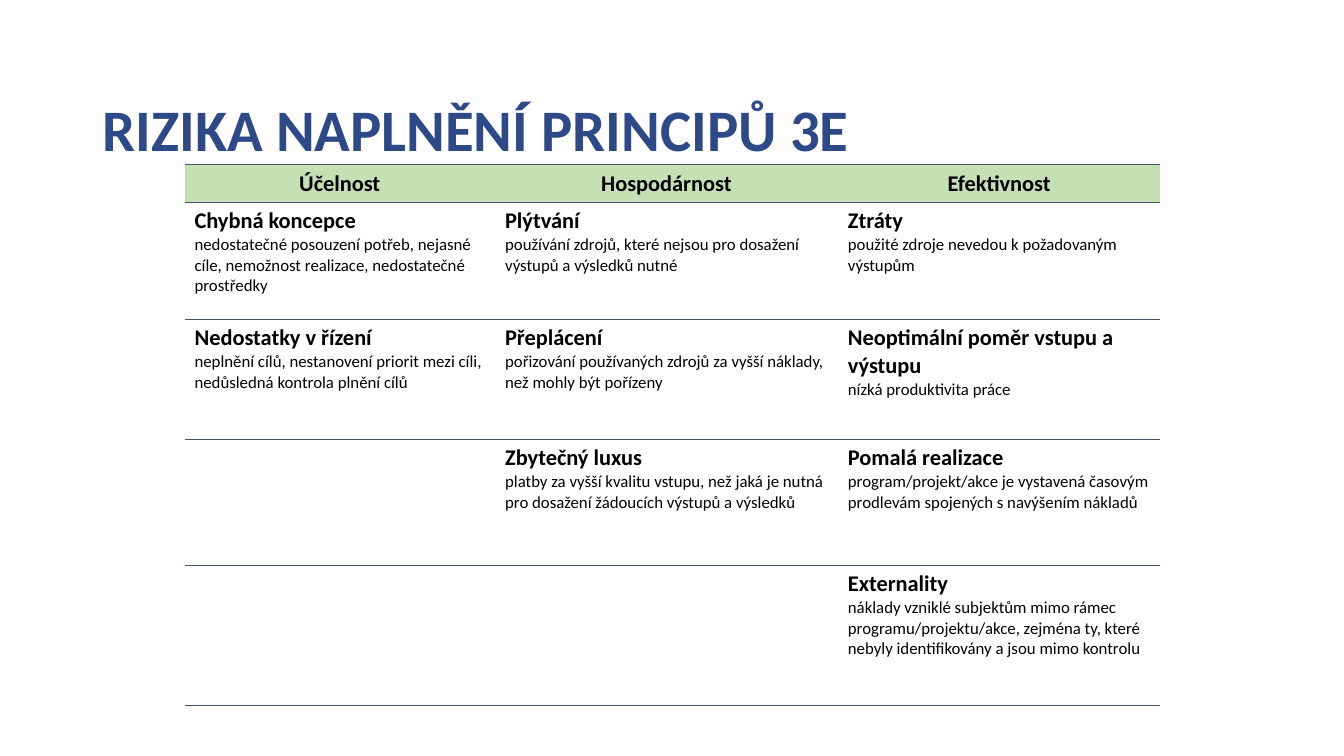
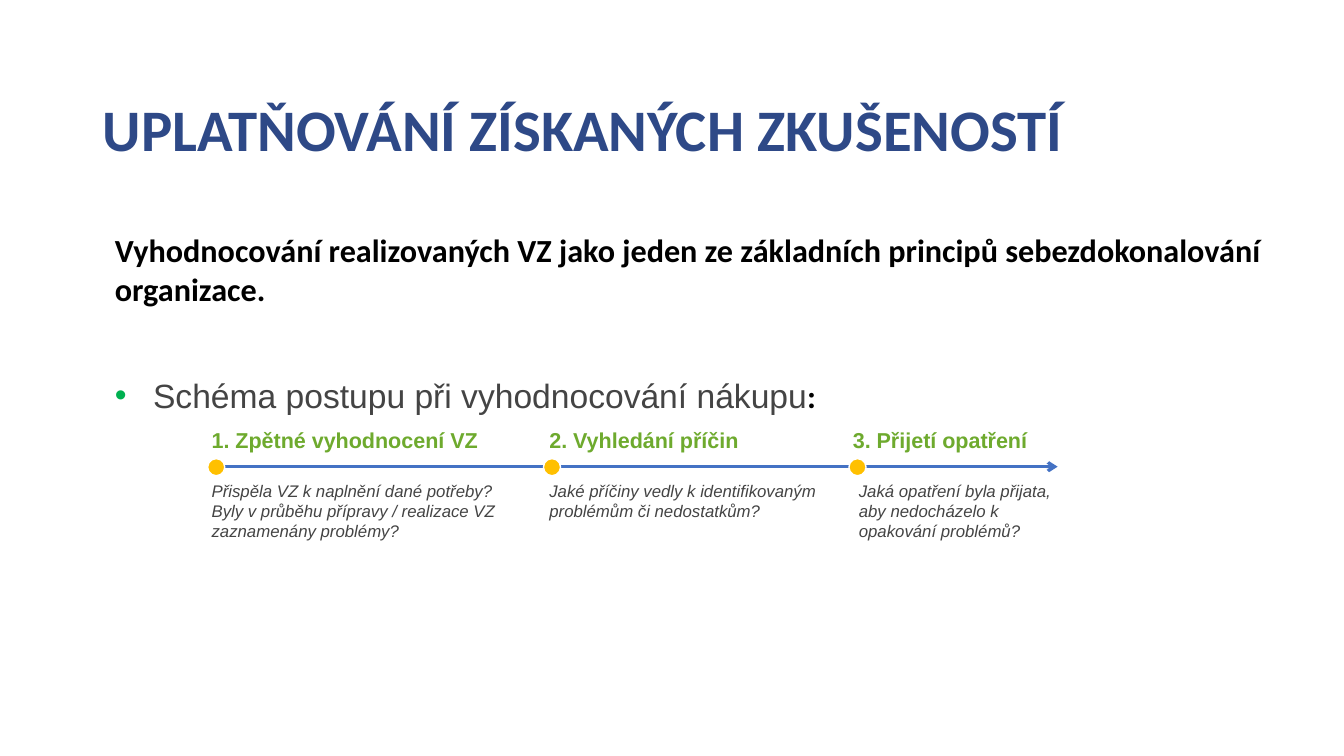
from lxml.etree import SubElement as Sub
from pptx import Presentation
from pptx.dml.color import RGBColor as RGB
from pptx.enum.shapes import MSO_CONNECTOR as LINE, MSO_SHAPE as SHAPE
from pptx.enum.text import MSO_ANCHOR as ANCHOR, PP_ALIGN as ALIGN
from pptx.oxml.ns import qn
from pptx.util import Inches, Pt

COLORS = {
    "title": "2E4987", "black": "000000", "gray": "444444",
    "head": "C5E0B4", "rule": "44546A", "step": "6EAA2E",
    "bullet": "00B050", "arrow": "4472C4", "dot": "FFC000", "white": "FFFFFF",
}
HEADS = ["Účelnost", "Hospodárnost", "Efektivnost"]
RISKS = [
    [("Chybná koncepce", "nedostatečné posouzení potřeb, nejasné cíle, nemožnost realizace, nedostatečné prostředky"),
     ("Plýtvání", "používání zdrojů, které nejsou pro dosažení výstupů a výsledků nutné"),
     ("Ztráty", "použité zdroje nevedou k požadovaným výstupům")],
    [("Nedostatky v řízení", "neplnění cílů, nestanovení priorit mezi cíli, nedůsledná kontrola plnění cílů"),
     ("Přeplácení", "pořizování používaných zdrojů za vyšší náklady, než mohly být pořízeny"),
     ("Neoptimální poměr vstupu a výstupu", "nízká produktivita práce")],
    [None,
     ("Zbytečný luxus", "platby za vyšší kvalitu vstupu, než jaká je nutná pro dosažení žádoucích výstupů a výsledků"),
     ("Pomalá realizace", "program/projekt/akce je vystavená časovým prodlevám spojených s navýšením nákladů")],
    [None, None,
     ("Externality", "náklady vzniklé subjektům mimo rámec programu/projektu/akce, zejména ty, které nebyly identifikovány a jsou mimo kontrolu")],
]
STEPS = [
    (2, 2.06, 2, 3.19, "1. Zpětné vyhodnocení VZ",
     ["Přispěla VZ k naplnění dané potřeby?",
      "Byly v průběhu přípravy / realizace VZ zaznamenány problémy?"]),
    (5.35, 5.39, 5.35, 3.01, "2. Vyhledání příčin",
     ["Jaké příčiny vedly k identifikovaným problémům či nedostatkům?"]),
    (8.36, 8.42, 8.42, 2.26, "3. Přijetí opatření",
     ["Jaká opatření byla přijata, aby nedocházelo k opakování problémů?"]),
]


class Deck:
    """Holds the shared style and the current slide."""

    def __init__(self):
        self.prs = Presentation()
        self.prs.slide_width, self.prs.slide_height = Inches(13.33), Inches(7.5)

    def color(self, name):
        return RGB.from_string(COLORS[name])

    def font(self, font, size, color, bold=False, italic=False, name="Calibri"):
        font.name, font.size = name, Pt(size)
        font.bold, font.italic = bold, italic
        font.color.rgb = self.color(color)

    def slide(self, title):
        self.page = self.prs.slides.add_slide(self.prs.slide_layouts[6])
        self.text((0.92, 0.87, 12.41, 0.81), [title], size=42, color="title", bold=True)

    def text(self, box, lines, **style):
        frame = self.page.shapes.add_textbox(*map(Inches, box)).text_frame
        frame.word_wrap = True
        for i, line in enumerate(lines):
            para = frame.paragraphs[0] if i == 0 else frame.add_paragraph()
            para.text = line
            self.font(para.font, **style)
        return frame

    def body(self, lead, item, end):
        frame = self.text((0.92, 2.24, 11.85, 2.47), [lead],
                          size=23, color="black", bold=True)
        first = frame.paragraphs[0]
        first.space_after = Pt(6)
        first._p.get_or_add_pPr().set("marL", str(Inches(0.12)))
        para = frame.add_paragraph()
        para.space_before = Pt(41.7)
        props = para._p.get_or_add_pPr()
        props.set("marL", str(Inches(0.5)))
        props.set("indent", str(Inches(-0.38)))
        tint = Sub(props, qn("a:buClr"))
        Sub(tint, qn("a:srgbClr"), val=COLORS["bullet"])
        Sub(props, qn("a:buFont"), typeface="Arial")
        Sub(props, qn("a:buChar"), char="•")
        for words, style in ((item, dict(size=24, color="gray", name="Arial")),
                             (end, dict(size=23, color="black", bold=True))):
            run = para.add_run()
            run.text = words
            self.font(run.font, **style)

    def edges(self, cell):
        props = cell._tc.get_or_add_tcPr()
        for side in "LR":
            Sub(Sub(props, qn("a:ln" + side), w="0"), qn("a:noFill"))
        for side in "TB":
            line = Sub(props, qn("a:ln" + side), w=str(Pt(1)))
            Sub(Sub(line, qn("a:solidFill")), qn("a:srgbClr"), val=COLORS["rule"])

    def cell(self, cell, entry, head):
        self.edges(cell)
        para = cell.text_frame.paragraphs[0]
        if head:
            cell.fill.solid()
            cell.fill.fore_color.rgb = self.color("head")
            cell.vertical_anchor = ANCHOR.MIDDLE
            para.alignment = ALIGN.CENTER
            para.text = entry
        else:
            cell.fill.background()
            if entry:
                name, note = entry
                para.add_run().text = name
                para.add_line_break()
                run = para.add_run()
                run.text = note
                run.font.size, run.font.bold = Pt(12), False
        self.font(para.font, 16, "black", bold=True)

    def table(self, left, top, cols, rows, data):
        table = self.page.shapes.add_table(
            len(rows), len(cols), Inches(left), Inches(top),
            Inches(sum(cols)), Inches(sum(rows))).table
        table.first_row = table.horz_banding = False
        for col, width in zip(table.columns, cols):
            col.width = Inches(width)
        for i, (row, high) in enumerate(zip(table.rows, rows)):
            row.height = Inches(high)
            for cell, entry in zip(row.cells, data[i]):
                self.cell(cell, entry, head=i == 0)

    def arrow(self, start, end, y):
        line = self.page.shapes.add_connector(
            LINE.STRAIGHT, Inches(start), Inches(y), Inches(end), Inches(y))
        line.line.color.rgb = self.color("arrow")
        line.line.width = Pt(2.25)
        Sub(line.line._get_or_add_ln(), qn("a:tailEnd"), type="arrow")
        Sub(line._element.spPr, qn("a:effectLst"))

    def dot(self, left, top, size=0.17):
        dot = self.page.shapes.add_shape(
            SHAPE.OVAL, *map(Inches, (left, top, size, size)))
        dot.shadow.inherit = False
        dot.fill.solid()
        dot.fill.fore_color.rgb = self.color("dot")
        dot.line.color.rgb = self.color("white")
        dot.line.width = Pt(1)

    def step(self, left, dot, note, width, name, lines):
        self.text((left, 4.19, 2.88, 0.36), [name],
                  size=15.4, color="step", bold=True, name="Arial")
        self.dot(dot, 4.55)
        self.text((note, 4.72, width, 0.71), lines,
                  size=12, color="gray", italic=True, name="Arial")


def main():
    deck = Deck()
    deck.slide("RIZIKA NAPLNĚNÍ PRINCIPŮ 3E")
    deck.table(1.83, 1.63, [3.08, 3.4, 3.2], [0.38, 1.16, 1.19, 1.25, 1.39],
               [HEADS, *RISKS])

    deck.slide("UPLATŇOVÁNÍ ZÍSKANÝCH ZKUŠENOSTÍ")
    deck.body("Vyhodnocování realizovaných VZ jako jeden ze základních principů "
              "sebezdokonalování organizace.",
              "Schéma postupu při vyhodnocování nákupu", ":")
    deck.arrow(2.14, 10.49, 4.63)
    for step in STEPS:
        deck.step(*step)
    deck.prs.save("out.pptx")


if __name__ == "__main__":
    main()
